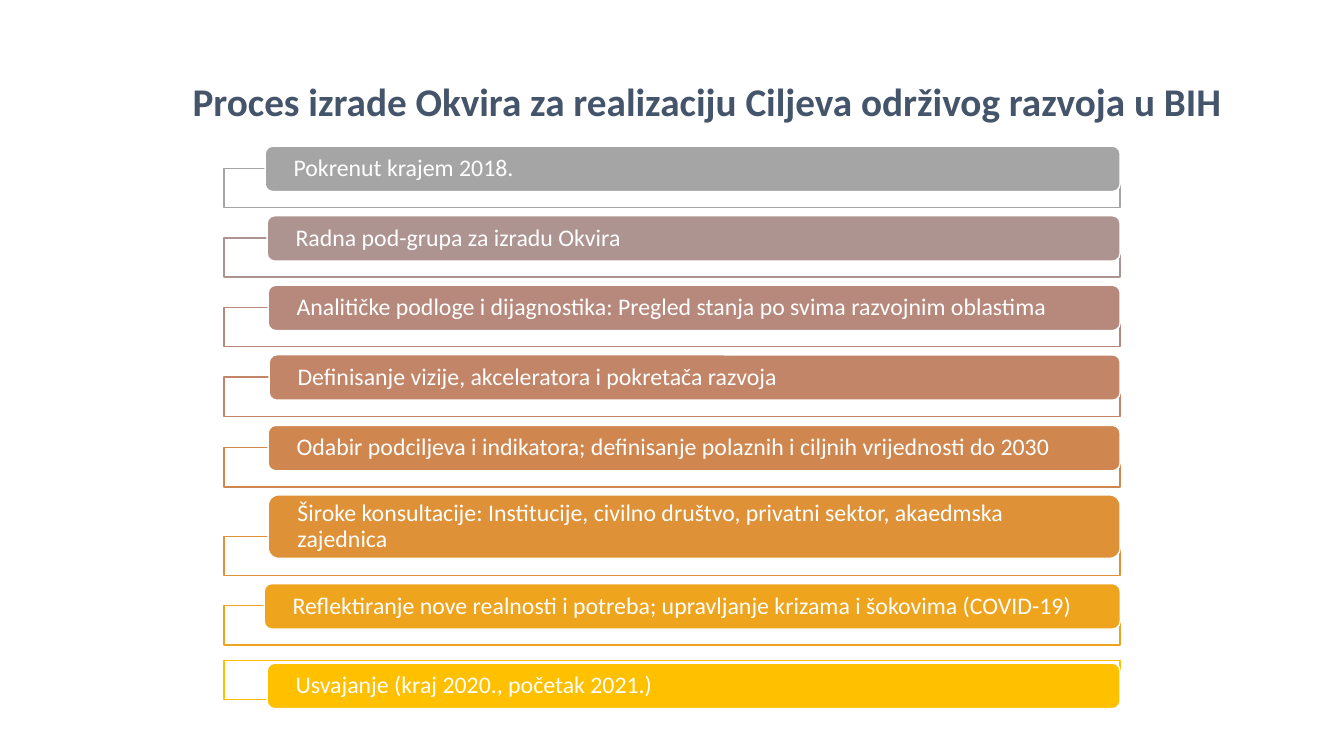
"""Build the slide on drafting the framework for the development goals."""
from dataclasses import dataclass

from lxml import etree
from pptx import Presentation
from pptx.dml.color import RGBColor
from pptx.enum.shapes import MSO_SHAPE
from pptx.enum.text import MSO_ANCHOR, PP_ALIGN
from pptx.oxml.ns import qn
from pptx.util import Inches, Pt

RECT, ROUND = MSO_SHAPE.RECTANGLE, MSO_SHAPE.ROUNDED_RECTANGLE
MIDDLE = MSO_ANCHOR.MIDDLE
LEFT, CENTER = PP_ALIGN.LEFT, PP_ALIGN.CENTER


@dataclass(frozen=True)
class Theme:
    """Hold the font, type sizes and shared colours."""
    font: str = "Calibri"
    head: int = 28
    body: int = 17
    ink: str = "44546A"
    white: str = "FFFFFF"
    line: float = 1


@dataclass(frozen=True)
class Step:
    """Describe one step; shift moves its bar and rise its frame."""
    text: str
    color: str
    left: float
    height: float = 0.45
    shift: float = 0
    rise: float = 0.23


THEME = Theme()
TOP, GAP = 1.45, 0.24
EDGE, RIGHT = 2.22, 11.11
DEPTH, INSET = 0.39, 0.26
STEPS = (
    Step("Pokrenut krajem 2018.", "A5A5A5", 2.63),
    Step("Radna pod-grupa za izradu Okvira", "AD9490", 2.65),
    Step("Analitičke podloge i dijagnostika: Pregled stanja po svima razvojnim oblastima",
         "B7897C", 2.66),
    Step("Definisanje vizije, akceleratora i pokretača razvoja", "C38567", 2.67),
    Step("Odabir podciljeva i indikatora; definisanje polaznih i ciljnih vrijednosti do 2030",
         "CF874F", 2.66, shift=0.01),
    Step("Široke konsultacije: Institucije, civilno društvo, privatni sektor, akaedmska zajednica",
         "DE9136", 2.66, height=0.63, shift=0.01, rise=0.22),
    Step("Reflektiranje nove realnosti i potreba; upravljanje krizama i šokovima (COVID-19)",
         "EEA41C", 2.62, shift=0.02),
    Step("Usvajanje (kraj 2020., početak 2021.)", "FFC000", 2.65, shift=0.12, rise=0.48),
)


def paint(shape, fill: str, line: str) -> None:
    """Set the fill and outline of a shape and drop its shadow."""
    shape.shadow.inherit = False
    shape.fill.solid()
    shape.fill.fore_color.rgb = RGBColor.from_string(fill)
    shape.line.color.rgb = RGBColor.from_string(line)
    shape.line.width = Pt(THEME.line)


def write(frame, text: str, size: int, color: str, align: PP_ALIGN, bold: bool = False):
    """Write one styled paragraph and return it."""
    frame.word_wrap = True
    para = frame.paragraphs[0]
    para.text, para.alignment = text, align
    font = para.font
    font.name, font.size, font.bold = THEME.font, Pt(size), bold
    font.color.rgb = RGBColor.from_string(color)
    return para


def draw_head(slide) -> None:
    """Draw the heading."""
    box = slide.shapes.add_textbox(Inches(1.68), Inches(0.72), Inches(10.66), Inches(0.57))
    write(box.text_frame, "Proces izrade Okvira za realizaciju Ciljeva održivog razvoja u BIH",
          THEME.head, THEME.ink, CENTER, bold=True)


def draw_step(slide, step: Step, top: float) -> None:
    """Draw the frame of a step and the labelled bar over it."""
    base = top + step.height
    frame = slide.shapes.add_shape(RECT, Inches(EDGE), Inches(base - step.rise),
                                   Inches(RIGHT - EDGE), Inches(DEPTH))
    paint(frame, THEME.white, step.color)
    tint = frame.fill._xPr.find(qn("a:solidFill"))[0]
    etree.SubElement(tint, qn("a:alpha"), val="90000")

    bar = slide.shapes.add_shape(ROUND, Inches(step.left), Inches(top),
                                 Inches(RIGHT - step.left), Inches(step.height))
    paint(bar, step.color, THEME.white)
    label = bar.text_frame
    label.vertical_anchor = MIDDLE
    label.margin_left = label.margin_right = Inches(INSET)
    label.margin_top = label.margin_bottom = 0
    para = write(label, step.text, THEME.body, THEME.white, LEFT)
    para.line_spacing = 0.9


def main() -> None:
    """Build and save the slide."""
    deck = Presentation()
    deck.slide_width, deck.slide_height = Inches(13.33), Inches(7.5)
    slide = deck.slides.add_slide(deck.slide_layouts[6])
    draw_head(slide)
    top = TOP
    for step in STEPS:
        draw_step(slide, step, top + step.shift)
        top += step.height + GAP
    deck.save("out.pptx")


if __name__ == "__main__":
    main()
